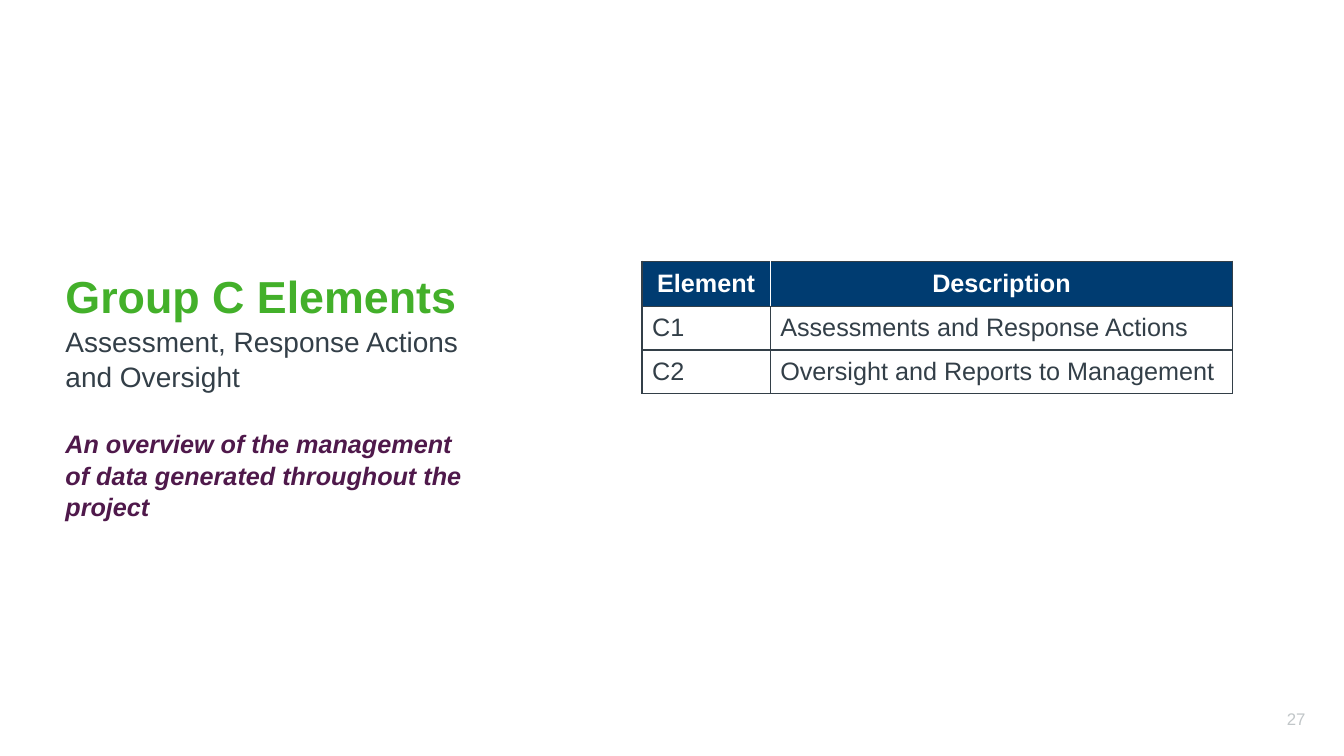
from lxml import etree
from pptx import Presentation
from pptx.dml.color import RGBColor
from pptx.enum.text import MSO_ANCHOR, PP_ALIGN
from pptx.oxml.ns import qn
from pptx.util import Cm, Pt

MIDDLE, TOP = MSO_ANCHOR.MIDDLE, MSO_ANCHOR.TOP
LEFT, CENTER, RIGHT = PP_ALIGN.LEFT, PP_ALIGN.CENTER, PP_ALIGN.RIGHT

FONT = "Arial"
WHITE, SLATE, NAVY = "FFFFFF", "333F48", "003C71"
GREEN, PLUM, GREY = "43B02A", "4F194B", "C1C6C8"

ELEMENTS = [
    ("Element", "Description"),
    ("C1", "Assessments and Response Actions"),
    ("C2", "Oversight and Reports to Management"),
]


def color(value):
    return RGBColor.from_string(value)


def add_span(para, text, size, tone, bold=False, italic=False):
    span = para.add_run()
    span.text = text
    span.font.name = FONT
    span.font.size = Pt(size)
    span.font.bold = bold
    span.font.italic = italic
    span.font.color.rgb = color(tone)


def add_text_frame(page, left, top, width, height, anchor):
    box = page.shapes.add_textbox(Cm(left), Cm(top), Cm(width), Cm(height))
    frame = box.text_frame
    frame.word_wrap = True
    frame.vertical_anchor = anchor
    return frame


def set_border(cell, side, tone):
    line = etree.Element(qn("a:" + side), w=str(Pt(1)))
    fill = etree.SubElement(line, qn("a:solidFill"))
    etree.SubElement(fill, qn("a:srgbClr"), val=tone)
    return line


def style_cell(cell, fill, borders):
    cell.vertical_anchor = MIDDLE
    cell.fill.solid()
    cell.fill.fore_color.rgb = color(fill)
    properties = cell._tc.get_or_add_tcPr()
    for position, side in enumerate(("lnL", "lnR", "lnT", "lnB")):
        properties.insert(position, set_border(cell, side, borders.get(side, SLATE)))


def add_summary(page, left, top, width, height):
    frame = add_text_frame(page, left, top, width, height, TOP)
    lines = [
        ("Group C Elements", 32, GREEN, True, False, 0),
        ("Assessment, Response Actions and Oversight", 20, SLATE, False, False, 0),
        ("An overview of the management of data generated throughout the project",
         18, PLUM, True, True, 24),
    ]
    for index, (text, size, tone, bold, italic, gap) in enumerate(lines):
        para = frame.add_paragraph() if index else frame.paragraphs[0]
        para.line_spacing = 1.05
        para.space_before = Pt(gap)
        add_span(para, text, size, tone, bold, italic)


def add_elements_table(page, left, top, widths, heights):
    frame = page.shapes.add_table(
        len(heights), len(widths), Cm(left), Cm(top), Cm(sum(widths)), Cm(sum(heights)))
    table = frame.table
    for column, width in zip(table.columns, widths):
        column.width = Cm(width)
    for row, height in zip(table.rows, heights):
        row.height = Cm(height)
    for row_index, texts in enumerate(ELEMENTS):
        header = row_index == 0
        for column_index, text in enumerate(texts):
            cell = table.cell(row_index, column_index)
            inner_side = "lnL" if column_index else "lnR"
            style_cell(cell, NAVY if header else WHITE, {inner_side: WHITE} if header else {})
            para = cell.text_frame.paragraphs[0]
            para.alignment = CENTER if header else LEFT
            add_span(para, text, 18, WHITE if header else SLATE, header)


def add_page_number(page, left, top, width, height):
    para = add_text_frame(page, left, top, width, height, MIDDLE).paragraphs[0]
    para.alignment = RIGHT
    add_span(para, "27", 12, GREY)


def main():
    deck = Presentation()
    deck.slide_width, deck.slide_height = Cm(33.87), Cm(19.05)
    page = deck.slides.add_slide(deck.slide_layouts[6])
    add_page_number(page, 26.29, 17.6, 6.86, 1.02)
    add_summary(page, 1.4, 6.58, 10.92, 6.5)
    add_elements_table(page, 16.18, 6.58, (3.23, 11.66), (1.14, 1.1, 1.1))
    deck.save("out.pptx")


if __name__ == "__main__":
    main()
